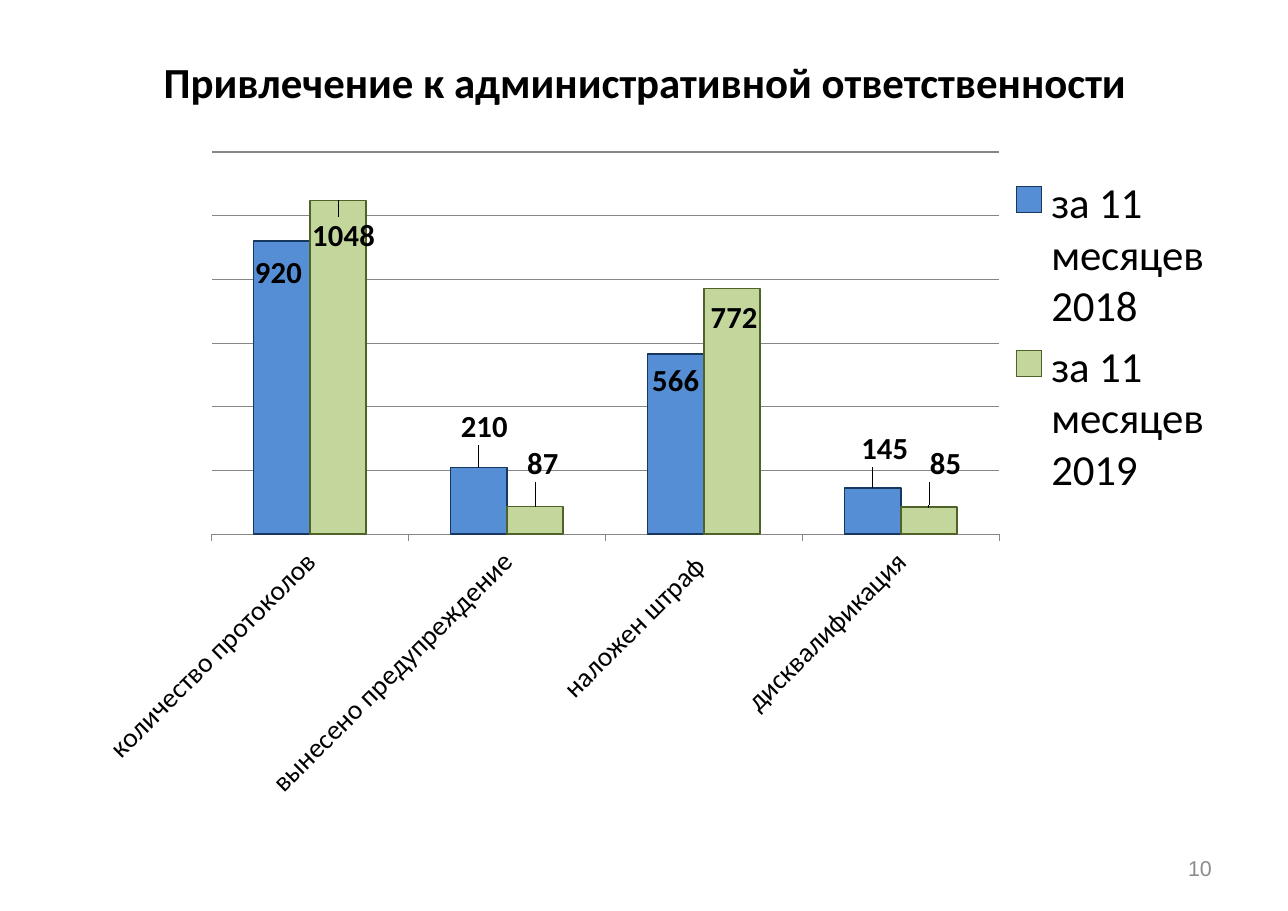
from dataclasses import dataclass
from typing import Any

from lxml.etree import SubElement
from pptx import Presentation
from pptx.chart.data import CategoryChartData
from pptx.dml.color import RGBColor
from pptx.enum.chart import XL_CHART_TYPE as Kind, XL_LABEL_POSITION as Spot
from pptx.enum.chart import XL_LEGEND_POSITION as Side, XL_TICK_MARK as Tick
from pptx.enum.text import MSO_ANCHOR as Anchor, PP_ALIGN as Align
from pptx.oxml.ns import qn
from pptx.util import Inches, Pt

WIDTH, HEIGHT = 10.52, 6.17
BLACK, GREY = "000000", "868686"
GROUPS = ["количество протоколов", "вынесено предупреждение",
          "наложен штраф ", "дисквалификация"]


@dataclass
class Year:
    name: str
    fill: str
    edge: str
    values: list[int]
    shifts: list[tuple[float, float]]


YEARS = [
    Year("за 11 месяцев 2018", "558ED5", "17375E", [920, 210, 566, 145],
         [(-0.03, 0.5), (0.05, -0.16), (0, 0.45), (0.11, -0.15)]),
    Year("за 11 месяцев 2019", "C3D69B", "4F6228", [1048, 87, 772, 85],
         [(0.05, 0.53), (0.07, -0.18), (0.02, 0.48), (0.15, -0.18)]),
]


def apply(item: Any, values: dict[str, Any]) -> None:
    for name, value in values.items():
        setattr(item, name, value)


def tint(color: Any, code: str) -> None:
    color.rgb = RGBColor.from_string(code)


def style(font: Any, size: int, bold: bool = False, face: str = "Calibri",
          code: str = BLACK) -> None:
    apply(font, {"size": Pt(size), "bold": bold, "name": face})
    tint(font.color, code)


def stroke(line: Any, code: str, width: float) -> None:
    tint(line.color, code)
    line.width = Pt(width)


def layout(node: Any, index: int, sizes: dict[str, float],
           modes: dict[str, str]) -> None:
    """Give a chart part a manual layout, with sizes in inches."""
    for old in node.findall(qn("c:layout")):
        node.remove(old)
    outer = SubElement(node, qn("c:layout"))
    node.insert(index, outer)
    manual = SubElement(outer, qn("c:manualLayout"))
    for tag, mode in modes.items():
        SubElement(manual, qn(f"c:{tag}")).set("val", mode)
    for tag, size in sizes.items():
        full = WIDTH if tag in "xw" else HEIGHT
        SubElement(manual, qn(f"c:{tag}")).set("val", f"{size / full:.4f}")


def write(shape: Any, text: str, align: Any) -> Any:
    """Fill a text shape and return its font."""
    frame = shape.text_frame
    apply(frame, {"word_wrap": True, "vertical_anchor": Anchor.MIDDLE,
                  "margin_left": Inches(0.11), "margin_right": Inches(0.11),
                  "margin_top": Inches(0.06), "margin_bottom": Inches(0.06)})
    para = frame.paragraphs[0]
    para.alignment = align
    run = para.add_run()
    run.text = text
    return run.font


def paint(series: Any, year: Year) -> None:
    """Colour the bars of one year and shift their labels."""
    series.format.fill.solid()
    tint(series.format.fill.fore_color, year.fill)
    stroke(series.format.line, year.edge, 1)
    series.invert_if_negative = False
    for index in range(len(year.values)):
        label = series.points[index].data_label
        label.position = Spot.OUTSIDE_END
        style(label.font, 20, True)
    apply(series.data_labels, {"show_value": True, "position": Spot.OUTSIDE_END})
    style(series.data_labels.font, 20, True)
    nodes = series.data_labels._element.findall(qn("c:dLbl"))
    for node, (x, y) in zip(nodes, year.shifts):
        layout(node, 1, {"x": x, "y": y}, {})


def draw(slide: Any) -> None:
    """Add the chart of both years."""
    data = CategoryChartData()
    data.categories = GROUPS
    for year in YEARS:
        data.add_series(year.name, year.values)
    chart = slide.shapes.add_chart(
        Kind.COLUMN_CLUSTERED, Inches(0.55), Inches(1.2),
        Inches(WIDTH), Inches(HEIGHT), data).chart
    apply(chart, {"has_title": False, "has_legend": True})
    style(chart.font, 18)

    plot = chart.plots[0]
    apply(plot, {"gap_width": 150, "vary_by_categories": False})
    for series, year in zip(plot.series, YEARS):
        paint(series, year)

    base, scale = chart.category_axis, chart.value_axis
    base.major_tick_mark = Tick.OUTSIDE
    stroke(base.format.line, GREY, 0.75)
    style(base.tick_labels.font, 18)
    base._element.find(f"{qn('c:txPr')}/{qn('a:bodyPr')}").set("rot", "-2700000")
    apply(scale, {"minimum_scale": 0, "maximum_scale": 1200, "major_unit": 200,
                  "has_major_gridlines": True, "visible": False})
    stroke(scale.major_gridlines.format.line, GREY, 0.75)

    legend = chart.legend
    apply(legend, {"position": Side.RIGHT, "include_in_layout": False})
    style(legend.font, 28)
    edges = {"xMode": "edge", "yMode": "edge"}
    layout(legend._element, 1, {"x": 8.55, "y": 0.34, "w": 1.95, "h": 3.05}, edges)
    area = chart._chartSpace.chart.plotArea
    layout(area, 0, {"x": 1.37, "y": 0.18, "w": 7.15, "h": 3.47},
           {"layoutTarget": "inner"} | edges)


def main() -> None:
    deck = Presentation()
    apply(deck, {"slide_width": Inches(11.69), "slide_height": Inches(8.27)})
    slide = deck.slides.add_slide(deck.slide_layouts[5])
    title = slide.shapes.title
    apply(title, {"left": Inches(0.59), "top": Inches(0.33),
                  "width": Inches(10.52), "height": Inches(0.81)})
    style(write(title, "Привлечение к административной ответственности",
                Align.CENTER), 28, True)
    draw(slide)
    page = slide.shapes.add_textbox(Inches(8.38), Inches(7.66),
                                    Inches(2.73), Inches(0.44))
    style(write(page, "10", Align.RIGHT), 14, face="Arial", code="8C8C8C")
    deck.save("out.pptx")


if __name__ == "__main__":
    main()
